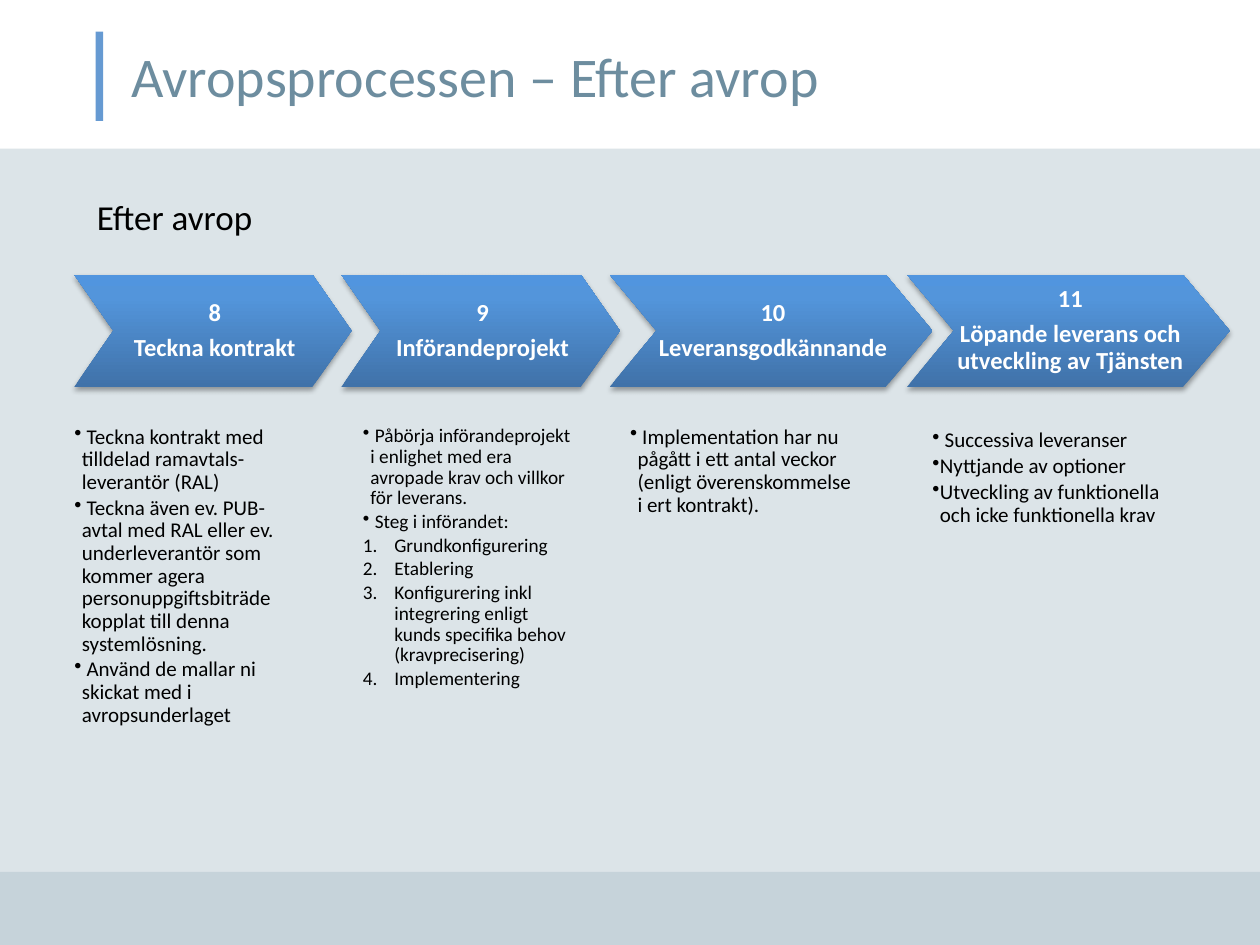
import pptx
import pptx.util
import pptx.dml.color
import pptx.enum.shapes
import pptx.enum.text
from lxml import etree
from pptx.oxml.ns import qn

FONT = "Calibri"
WIDTH, HEIGHT = 10, 7.5
CHEVRON_TOP, CHEVRON_HEIGHT = 2.18, 0.89
DETAIL_HEIGHT = 3.39
GRADIENT = [(0, "4072A9"), (80, "5395DB"), (100, "5195DF")]

TITLE = "Avropsprocessen – Efter avrop"
SUBTITLE = "Efter avrop"

# left, top, width, height, colour, opacity in percent
BANDS = [
    (0, 1.18, WIDTH, 5.74, "C6D3DA", 60),
    (0, 6.92, WIDTH, HEIGHT - 6.92, "C6D3DA", 100),
    (0.76, 0.25, 0.06, 0.71, "669AD2", 100),
]

BULLET, NUMBER = "bullet", "number"
STEPS = [
    {"number": "8", "name": "Teckna kontrakt", "chevron": (0.59, 2.2, 0.31),
     "detail": (0.59, 3.38, 1.81), "size": 12, "items": [
         (BULLET, " Teckna kontrakt med tilldelad ramavtals-leverantör (RAL)"),
         (BULLET, " Teckna även ev. PUB-avtal med RAL eller ev. underleverantör som "
                  "kommer agera personuppgiftsbiträde kopplat till denna systemlösning."),
         (BULLET, " Använd de mallar ni skickat med i avropsunderlaget")]},
    {"number": "9", "name": "Införandeprojekt", "chevron": (2.71, 2.21, 0.31),
     "detail": (2.88, 3.38, 1.69), "size": 11, "items": [
         (BULLET, " Påbörja införandeprojekt i enlighet med era avropade krav "
                  "och villkor för leverans."),
         (BULLET, " Steg i införandet:"),
         (NUMBER, "Grundkonfigurering"),
         (NUMBER, "Etablering"),
         (NUMBER, "Konfigurering inkl integrering enligt kunds specifika behov "
                  "(kravprecisering)"),
         (NUMBER, "Implementering")]},
    {"number": "10", "name": "Leveransgodkännande", "chevron": (4.84, 2.56, 0.37),
     "detail": (5, 3.38, 1.81), "size": 12, "items": [
         (BULLET, " Implementation har nu pågått i ett antal veckor "
                  "(enligt överenskommelse i ert kontrakt).")]},
    {"number": "11", "name": "Löpande leverans och utveckling av Tjänsten",
     "chevron": (7.2, 2.56, 0.37),
     "detail": (7.4, 3.41, 1.81), "size": 12, "items": [
         (BULLET, " Successiva leveranser"),
         (BULLET, "Nyttjande av optioner"),
         (BULLET, "Utveckling av funktionella och icke funktionella krav")]},
]


def inches(*lengths):
    return [pptx.util.Inches(length) for length in lengths]


def rgb(colour):
    return pptx.dml.color.RGBColor.from_string(colour)


def child(parent, tag, **attributes):
    return etree.SubElement(parent, qn(tag), **attributes)


def add_run(paragraph, text, size, colour, bold=False):
    run = paragraph.add_run()
    run.text = text
    run.font.name = FONT
    run.font.size = pptx.util.Pt(size)
    run.font.bold = bold
    run.font.color.rgb = rgb(colour)


def set_frame(frame, margins, anchor=pptx.enum.text.MSO_ANCHOR.TOP, wrap=True):
    frame.word_wrap = wrap
    frame.vertical_anchor = anchor
    (frame.margin_left, frame.margin_top,
     frame.margin_right, frame.margin_bottom) = inches(*margins)


def paragraphs(frame, count):
    return [frame.paragraphs[0]] + [frame.add_paragraph() for _ in range(count - 1)]


def add_band(slide, left, top, width, height, colour, opacity):
    band = slide.shapes.add_shape(pptx.enum.shapes.MSO_SHAPE.RECTANGLE,
                                  *inches(left, top, width, height))
    band.shadow.inherit = False
    band.line.fill.background()
    band.fill.solid()
    band.fill.fore_color.rgb = rgb(colour)
    if opacity < 100:
        fill = band._element.spPr.find(qn("a:solidFill"))
        child(fill[0], "a:alpha", val=str(opacity * 1000))


def add_line(slide, box, text, size, colour, margins, **frame_options):
    frame = slide.shapes.add_textbox(*inches(*box)).text_frame
    set_frame(frame, margins, **frame_options)
    add_run(frame.paragraphs[0], text, size, colour)


def shade(shape):
    """Give a vertical gradient and a soft shadow straight below."""
    shape.fill.gradient()
    shape.fill.gradient_angle = 90
    properties = shape._element.spPr
    stops = properties.find(qn("a:gradFill")).find(qn("a:gsLst"))
    for stop in list(stops):
        stops.remove(stop)
    for position, colour in GRADIENT:
        stop = child(stops, "a:gs", pos=str(position * 1000))
        child(stop, "a:srgbClr", val=colour)
    shape.line.fill.background()
    shape.shadow.inherit = False
    shadow = child(properties.find(qn("a:effectLst")), "a:outerShdw",
                   blurRad=str(pptx.util.Pt(3.1)), dist=str(pptx.util.Pt(1.8)),
                   dir="5400000", rotWithShape="0")
    child(child(shadow, "a:srgbClr", val="000000"), "a:alpha", val="35000")


def add_chevron(slide, step):
    left, width, notch = step["chevron"]
    right, middle = left + width, CHEVRON_TOP + CHEVRON_HEIGHT / 2
    bottom = CHEVRON_TOP + CHEVRON_HEIGHT
    corners = [(left, CHEVRON_TOP), (right - notch, CHEVRON_TOP), (right, middle),
               (right - notch, bottom), (left, bottom), (left + notch, middle)]
    outline = [inches(*corner) for corner in corners]
    builder = slide.shapes.build_freeform(*outline[0])
    builder.add_line_segments(outline[1:], close=True)
    chevron = builder.convert_to_shape()
    shade(chevron)
    frame = chevron.text_frame
    set_frame(frame, (0.34, 0.01, 0.31, 0.01), pptx.enum.text.MSO_ANCHOR.MIDDLE)
    labels = (step["number"], step["name"])
    for paragraph, label in zip(paragraphs(frame, len(labels)), labels):
        paragraph.alignment = pptx.enum.text.PP_ALIGN.CENTER
        paragraph.line_spacing = 0.9
        paragraph.space_after = pptx.util.Pt(14 * 0.35)
        add_run(paragraph, label, 14, "FFFFFF", bold=True)


def mark(paragraph, kind):
    """Add a hanging bullet or number."""
    properties = paragraph._p.get_or_add_pPr()
    hang = pptx.util.Inches(0.06 if kind == BULLET else 0.25)
    properties.set("marL", str(hang))
    properties.set("indent", str(-hang))
    if kind == BULLET:
        child(properties, "a:buChar", char="•")
    else:
        child(properties, "a:buAutoNum", type="arabicPeriod")


def add_detail(slide, step):
    box = inches(*step["detail"], DETAIL_HEIGHT)
    frame = slide.shapes.add_textbox(*box).text_frame
    set_frame(frame, (0, 0, 0, 0))
    items = step["items"]
    for paragraph, (kind, text) in zip(paragraphs(frame, len(items)), items):
        mark(paragraph, kind)
        paragraph.line_spacing = 0.9
        paragraph.space_after = pptx.util.Pt(step["size"] * 0.15)
        add_run(paragraph, text, step["size"], "000000")


def main():
    deck = pptx.Presentation()
    deck.slide_width, deck.slide_height = inches(WIDTH, HEIGHT)
    slide = deck.slides.add_slide(deck.slide_layouts[6])
    for band in BANDS:
        add_band(slide, *band)
    add_line(slide, (0.78, 0.18, 8.45, 0.84), TITLE, 32, "6D8D9F",
             (0.26, 0.04, 0.1, 0.04), anchor=pptx.enum.text.MSO_ANCHOR.MIDDLE)
    add_line(slide, (0.67, 1.5, 1.49, 0.44), SUBTITLE, 20, "000000",
             (0.1, 0.05, 0.1, 0.05), wrap=False)
    for step in STEPS:
        add_chevron(slide, step)
        add_detail(slide, step)
    deck.save("out.pptx")


if __name__ == "__main__":
    main()
